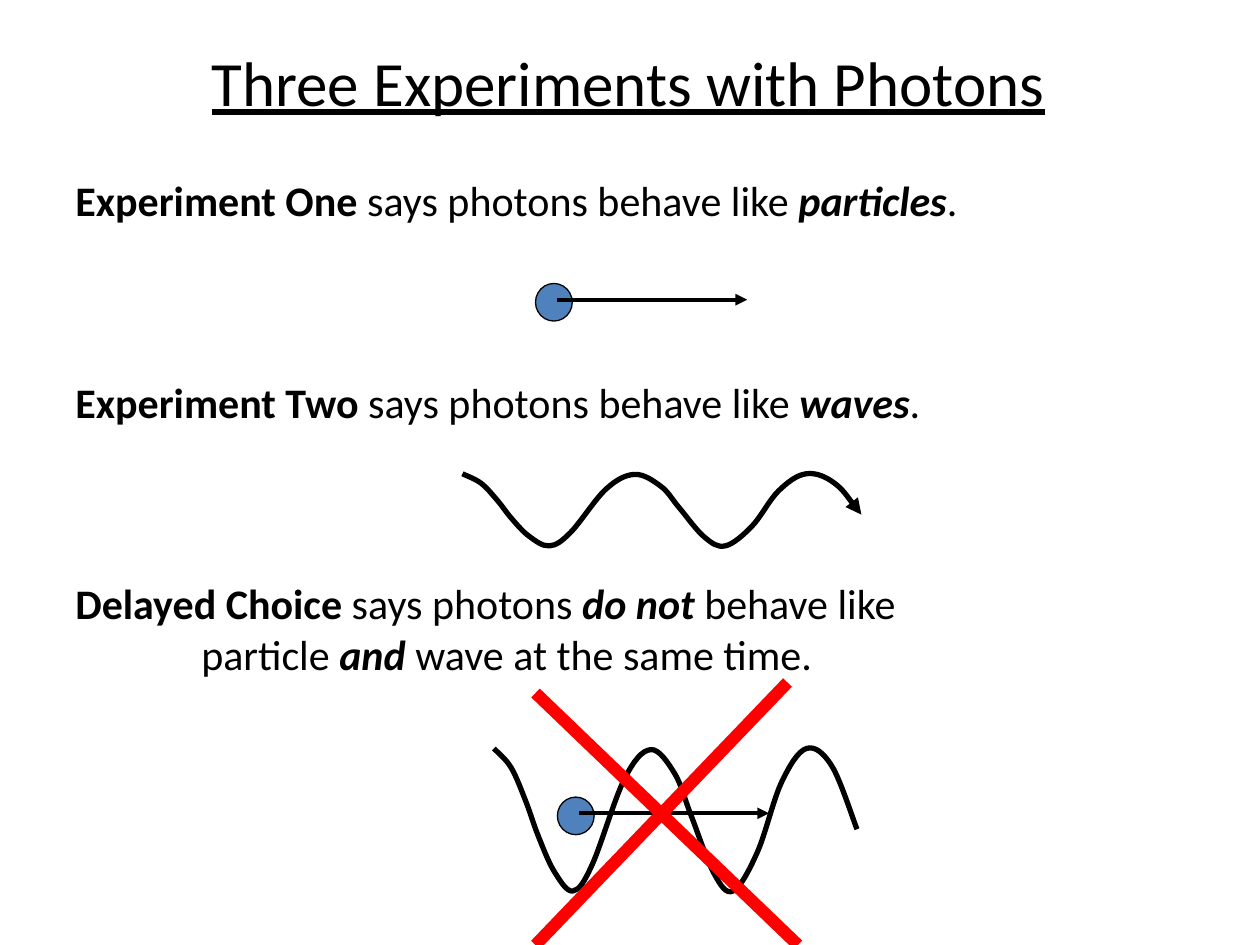
from dataclasses import dataclass

from pptx import Presentation
from pptx import util as u
from pptx.dml import color as c
from pptx.enum import shapes, text
from pptx.oxml import ns
from pptx.oxml import xmlchemy as x


@dataclass(frozen=True)
class Theme:
    font: str = "Calibri"
    title_size: int = 36
    body_size: int = 24
    ink: c.RGBColor = c.RGBColor(0x00, 0x00, 0x00)
    photon: c.RGBColor = c.RGBColor(0x4F, 0x81, 0xBD)
    cross: c.RGBColor = c.RGBColor(0xFF, 0x00, 0x00)


theme = Theme()


def write(paragraph, content, size=theme.body_size, bold=False, italic=False, underline=False):
    run = paragraph.add_run()
    run.text = content
    font = run.font
    font.name = theme.font
    font.size = u.Pt(size)
    font.bold = bold
    font.italic = italic
    font.underline = underline
    font.color.rgb = theme.ink


def outline(shape, color, width, arrow=False):
    shape.line.color.rgb = color
    shape.line.width = u.Pt(width)
    if arrow:
        tail = x.OxmlElement("a:tailEnd")
        tail.set("type", "triangle")
        shape.line._get_or_add_ln().append(tail)
    shape._element.spPr.append(x.OxmlElement("a:effectLst"))


presentation = Presentation()
presentation.slide_width = u.Pt(720)
presentation.slide_height = u.Pt(540)
slide = presentation.slides.add_slide(presentation.slide_layouts[5])

title = slide.shapes.title
title.left, title.top, title.width, title.height = u.Pt(111.5), u.Pt(21), u.Pt(495), u.Pt(51)
title.text_frame.word_wrap = False
title.text_frame.vertical_anchor = text.MSO_ANCHOR.TOP
heading = title.text_frame.paragraphs[0]
heading.alignment = text.PP_ALIGN.CENTER
write(heading, "Three Experiments with Photons", size=theme.title_size, underline=True)

plain = {}
strong = {"bold": True}
stressed = {"bold": True, "italic": True}
section_gap = 86.5
findings = [
    (0, 0, [("Experiment One", strong), (" says photons behave like ", plain),
            ("particles", stressed), (".", plain)]),
    (section_gap, 0, [("Experiment Two ", strong), ("says photons behave like ", plain),
                      ("waves", stressed), (".", plain)]),
    (section_gap, 0, [("Delayed Choice", strong), (" says photons ", plain),
                      ("do not ", stressed), ("behave like", plain)]),
    (0, 72, [("particle ", plain), ("and", stressed),
             (" wave at the same time.", plain)]),
]
body = slide.shapes.add_textbox(u.Pt(36), u.Pt(96), u.Pt(523.5), u.Pt(298)).text_frame
body.word_wrap = False
for index, (gap, indent, runs) in enumerate(findings):
    paragraph = body.add_paragraph() if index else body.paragraphs[0]
    paragraph.alignment = text.PP_ALIGN.LEFT
    paragraph.space_before = u.Pt(gap)
    paragraph._p.get_or_add_pPr().set("marL", str(u.Pt(indent)))
    for content, style in runs:
        write(paragraph, content, **style)

particles = []
for left, top in [(306, 162), (318.5, 455.5)]:
    photon = slide.shapes.add_shape(
        shapes.MSO_SHAPE.OVAL, u.Pt(left), u.Pt(top), u.Pt(21), u.Pt(21.5))
    photon.fill.solid()
    photon.fill.fore_color.rgb = theme.photon
    outline(photon, theme.ink, 0.75)
    motion_y = u.Pt(top + 9.25)
    motion = slide.shapes.add_connector(
        shapes.MSO_CONNECTOR.STRAIGHT, u.Pt(left + 12.25), motion_y,
        u.Pt(left + 121), motion_y)
    outline(motion, theme.ink, 2.25, arrow=True)
    particles.append([photon, motion])

wave_knots = [
    (0, 1.7), (4.7, 14.4), (8.8, 37.3), (12.3, 61), (16.7, 84.7), (21.8, 97.5),
    (27.1, 79.7), (36, 22), (43.2, 2.5), (49.8, 18.6), (54.3, 46.6), (60.6, 85.6),
    (65.9, 97.5), (72.6, 71.2), (79.2, 24.6), (86.1, 1.7), (93.1, 13.6), (100, 56),
]
waves = []
for left, top, width, height, arrow in [
    (264.25, 270, 228, 43, True),
    (282.25, 426.25, 207.5, 85, False),
]:
    points = [(u.Pt(left + width * across / 100), u.Pt(top + height * down / 100))
              for across, down in wave_knots]
    builder = slide.shapes.build_freeform(*points[0])
    builder.add_line_segments(points[1:], close=False)
    wave = builder.convert_to_shape()
    knots = [(int(point.get("x")), int(point.get("y")))
             for point in wave._element.spPr.iter(ns.qn("a:pt"))]
    padded = [knots[0], *knots, knots[-1]]
    segments = list(wave._element.spPr.iter(ns.qn("a:lnTo")))
    for segment, before, start, end, after in zip(
            segments, padded, padded[1:], padded[2:], padded[3:]):
        segment.tag = ns.qn("a:cubicBezTo")
        for place, (anchor, ahead, behind) in enumerate([(start, end, before), (end, start, after)]):
            handle = x.OxmlElement("a:pt")
            for axis, name in enumerate("xy"):
                handle.set(name, str(round(anchor[axis] + (ahead[axis] - behind[axis]) / 6)))
            segment.insert(place, handle)
    wave.fill.background()
    outline(wave, theme.ink, 3, arrow=arrow)
    waves.append(wave)

slide.shapes.add_group_shape(particles[0])
slide.shapes.add_group_shape([*particles[1], waves[1]])

for ends in [(306, 396, 456, 540), (450, 390, 306, 540)]:
    stroke = slide.shapes.add_connector(
        shapes.MSO_CONNECTOR.STRAIGHT, *[u.Pt(value) for value in ends])
    outline(stroke, theme.cross, 7)

presentation.save("out.pptx")
